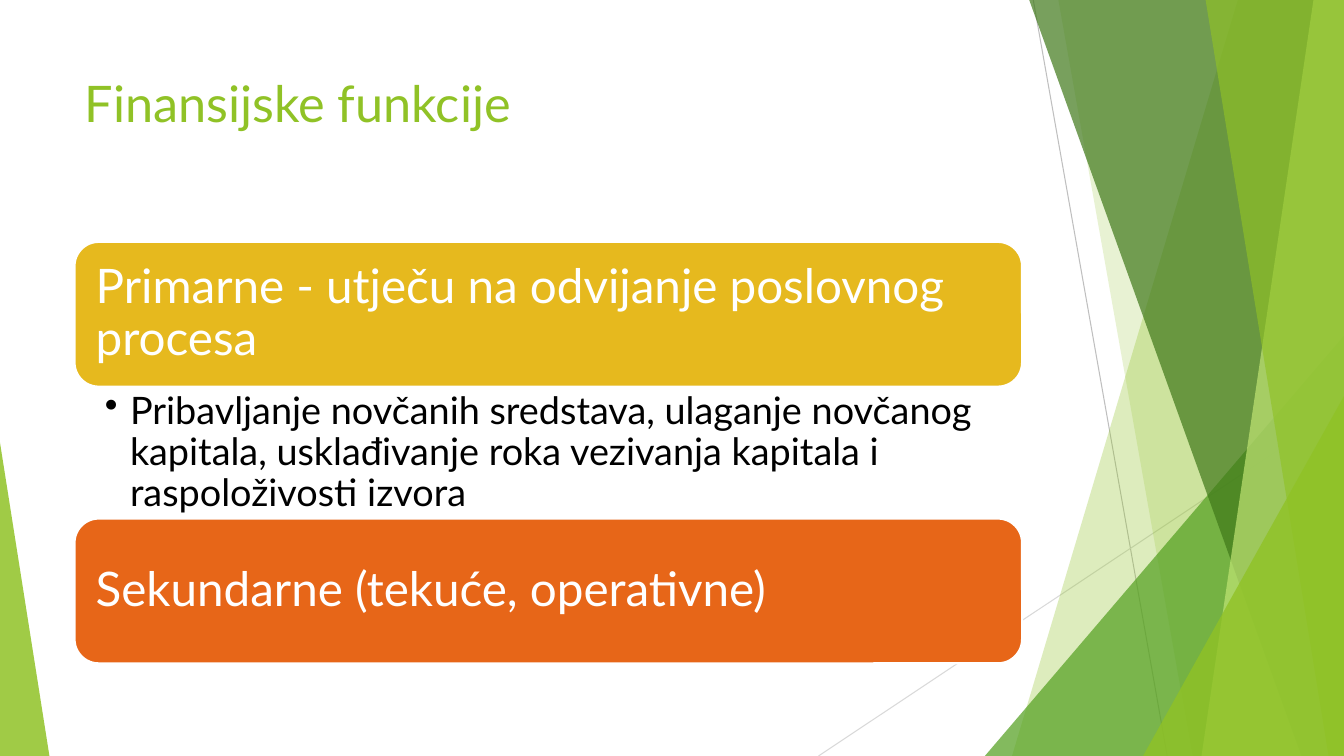
"""Build the slide on financial functions with its faceted green frame."""
from dataclasses import dataclass

from lxml import etree
from pptx import Presentation
from pptx.dml.color import RGBColor
from pptx.enum.shapes import MSO_CONNECTOR, MSO_SHAPE
from pptx.enum.text import MSO_ANCHOR, MSO_AUTO_SIZE, PP_ALIGN
from pptx.oxml.ns import qn
from pptx.util import Inches, Pt

STRAIGHT = MSO_CONNECTOR.STRAIGHT
TRIANGLE = MSO_SHAPE.ISOSCELES_TRIANGLE
ROUNDED = MSO_SHAPE.ROUNDED_RECTANGLE
TOP, MIDDLE = MSO_ANCHOR.TOP, MSO_ANCHOR.MIDDLE
LEFT = PP_ALIGN.LEFT
NO_FIT = MSO_AUTO_SIZE.NONE

FONT = "Lato"
TITLE_ONLY = 5
WIDTH, HEIGHT = Inches(13.33), Inches(7.5)
COLORS = {
    "green": "90C226", "leaf": "54A021", "forest": "3F7819", "lime": "C0E474",
    "gold": "E6B91E", "orange": "E76618", "white": "FFFFFF", "black": "000000",
    "gray": "BFBFBF", "pale": "D9D9D9",
}

BODY_LEFT, BODY_WIDTH = 5.55, 70.5
TITLE_TOP, BODY_TOP = 8.93, 32
CARD_HEIGHT, DETAIL_HEIGHT = 19.15, 17.45


@dataclass
class Ray:
    start: tuple[float, float]
    end: tuple[float, float]
    color: str


@dataclass
class Band:
    """Strip to the right edge, from its left end at the top to the one at the bottom."""
    top_x: float
    bottom_x: float
    color: str
    opacity: int


@dataclass
class Corner:
    """Triangle standing on the bottom edge."""
    left: float
    top: float
    width: float
    peak: float
    color: str
    opacity: int


@dataclass
class Section:
    heading: str
    color: str
    detail: str = ""


RAYS = [
    Ray((76.88, 0), (86.85, 100), "gray"),
    Ray((100, 53.73), (60.9, 100), "pale"),
]
FACETS = [
    Band(92.1, 75.3, "green", 30),
    Band(78.75, 88.73, "green", 20),
    Corner(73.28, 44.4, 26.72, 1, "leaf", 72),
    Band(76.58, 96.83, "forest", 70),
    Band(97.73, 89.4, "lime", 70),
    Band(89.7, 98.85, "green", 65),
    Corner(85.05, 52.4, 14.95, 1, "green", 80),
    Corner(0, 58.53, 3.68, 0, "green", 85),
]
SECTIONS = [
    Section("Primarne - utječu na odvijanje poslovnog procesa", "gold",
            "Pribavljanje novčanih sredstava, ulaganje novčanog kapitala, "
            "usklađivanje roka vezivanja kapitala i raspoloživosti izvora"),
    Section("Sekundarne (tekuće, operativne)", "orange"),
]


def px(share: float) -> int:
    return round(WIDTH * share / 100)


def py(share: float) -> int:
    return round(HEIGHT * share / 100)


def rgb(name: str) -> RGBColor:
    return RGBColor.from_string(COLORS[name])


def paint(sp, color: str, opacity: int = 100) -> None:
    sp.shadow.inherit = False
    sp.fill.solid()
    sp.fill.fore_color.rgb = rgb(color)
    sp.line.fill.background()
    if opacity < 100:
        clr = sp.fill._xPr.find(f".//{qn('a:srgbClr')}")
        etree.SubElement(clr, qn("a:alpha"), val=str(opacity * 1000))


def write(sp, text: str, *, size: float, color: str, anchor=TOP, spacing: float = 1,
          insets: tuple[float, float, float, float] = (0.1, 0.05, 0.1, 0.05),
          bullet: str = "") -> None:
    tf = sp.text_frame
    tf.word_wrap, tf.auto_size, tf.vertical_anchor = True, NO_FIT, anchor
    tf.margin_left, tf.margin_top, tf.margin_right, tf.margin_bottom = map(Inches, insets)
    p = tf.paragraphs[0]
    p.alignment, p.line_spacing = LEFT, spacing
    r = p.add_run()
    r.text = text
    r.font.name, r.font.size, r.font.color.rgb = FONT, Pt(size), rgb(color)
    if bullet:
        pPr = p._p.get_or_add_pPr()
        pPr.set("marL", str(Inches(0.25)))
        pPr.set("indent", str(-Inches(0.25)))
        etree.SubElement(pPr, qn("a:buChar"), char=bullet)


def draw_ray(shapes, ray: Ray) -> None:
    (x1, y1), (x2, y2) = ray.start, ray.end
    line = shapes.add_connector(STRAIGHT, px(x1), py(y1), px(x2), py(y2))
    line.line.color.rgb = rgb(ray.color)
    line.line.width = Pt(0.75)
    etree.SubElement(line._element.spPr, qn("a:effectLst"))


def draw_facet(shapes, facet: Band | Corner) -> None:
    if isinstance(facet, Band):
        fb = shapes.build_freeform(px(facet.top_x), 0)
        fb.add_line_segments([(WIDTH, 0), (WIDTH, HEIGHT), (px(facet.bottom_x), HEIGHT)])
        sp = fb.convert_to_shape()
    else:
        sp = shapes.add_shape(TRIANGLE, px(facet.left), py(facet.top),
                              px(facet.width), py(100 - facet.top))
        sp.adjustments[0] = facet.peak
    paint(sp, facet.color, facet.opacity)


def draw_section(shapes, section: Section, top: float) -> float:
    """Draw the card and its detail, and return where the next one starts."""
    x, w = px(BODY_LEFT), px(BODY_WIDTH)
    card = shapes.add_shape(ROUNDED, x, py(top), w, py(CARD_HEIGHT))
    paint(card, section.color)
    card.line.color.rgb = rgb("white")
    card.line.width = Pt(1.5)
    write(card, section.heading, size=34, color="white", anchor=MIDDLE,
          spacing=0.9, insets=(0.14,) * 4)
    top += CARD_HEIGHT
    if section.detail:
        box = shapes.add_textbox(x, py(top), w, py(DETAIL_HEIGHT))
        write(box, section.detail, size=27, color="black", spacing=0.9,
              insets=(0.3, 0.05, 0.26, 0.05), bullet="•")
        top += DETAIL_HEIGHT
    return top


def main() -> None:
    prs = Presentation()
    prs.slide_width, prs.slide_height = WIDTH, HEIGHT
    shapes = prs.slides.add_slide(prs.slide_layouts[TITLE_ONLY]).shapes
    for ray in RAYS:
        draw_ray(shapes, ray)
    for facet in FACETS:
        draw_facet(shapes, facet)
    title = shapes.title
    title.left, title.top = px(BODY_LEFT), py(TITLE_TOP)
    title.width, title.height = px(BODY_WIDTH), py(CARD_HEIGHT)
    write(title, "Finansijske funkcije", size=36, color="green")
    top = BODY_TOP
    for section in SECTIONS:
        top = draw_section(shapes, section, top)
    prs.save("out.pptx")


if __name__ == "__main__":
    main()
